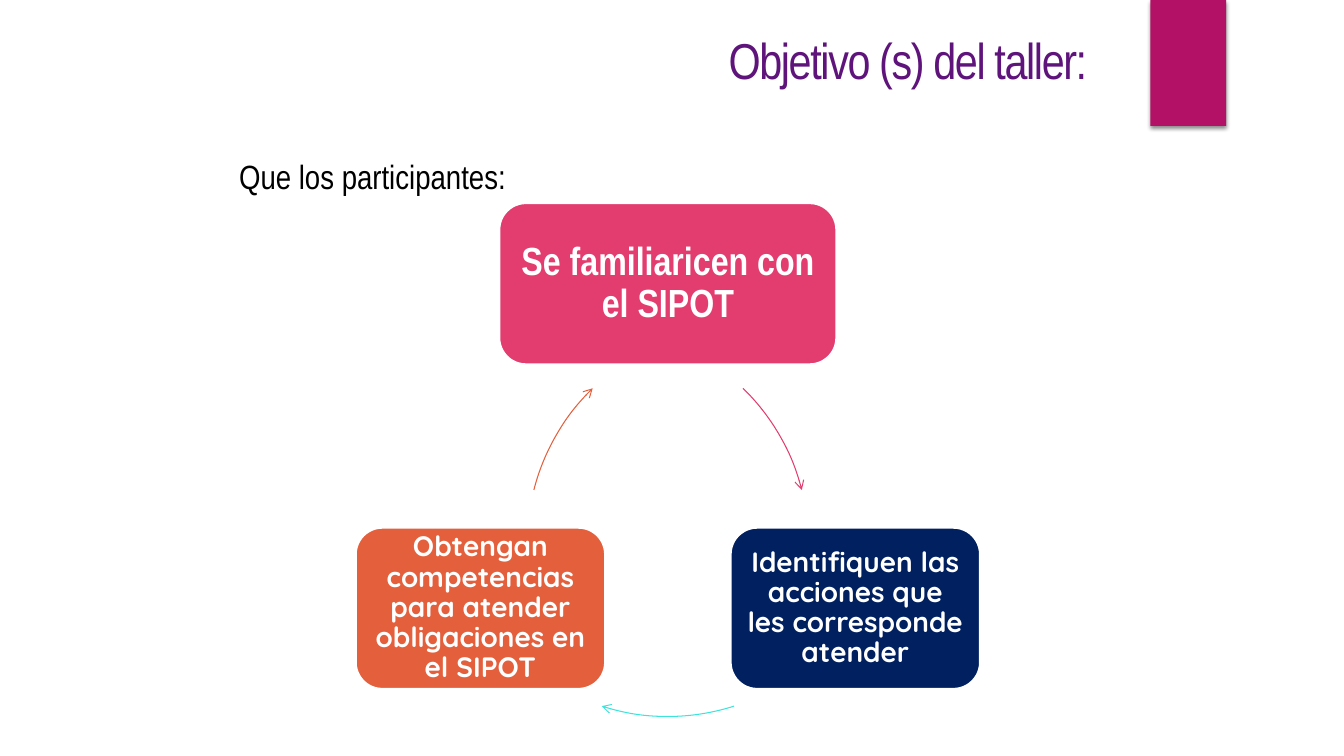
from dataclasses import dataclass
from math import cos, radians, sin

from lxml.etree import SubElement
from pptx import Presentation
from pptx.dml.color import RGBColor
from pptx.enum.shapes import MSO_SHAPE
from pptx.enum.text import MSO_ANCHOR, PP_ALIGN
from pptx.oxml.ns import qn
from pptx.util import Inches, Pt


@dataclass(frozen=True)
class Theme:
    """Colours, fonts and type sizes of the slide."""
    white: str = "FFFFFF"
    black: str = "000000"
    title: str = "5F147C"
    ribbon: str = "B31166"
    pink: str = "E33D6F"
    navy: str = "002060"
    orange: str = "E45F3C"
    turquoise: str = "3CE4DC"
    narrow: str = "Arial Narrow"
    rounded: str = "Quicksand"
    title_size: int = 36
    intro_size: int = 24
    lead_size: int = 28
    goal_size: int = 20


THEME = Theme()


@dataclass(frozen=True)
class Box:
    """A rectangle in inches."""
    left: float
    top: float
    width: float
    height: float

    def emu(self):
        """Return the four lengths for python-pptx."""
        return [Inches(n) for n in (self.left, self.top, self.width, self.height)]


def centred(x, y, width, height):
    """Return a box centred on a point."""
    return Box(x - width / 2, y - height / 2, width, height)


def add_shape(slide, preset, box, fill=None, line=None, weight=1):
    """Add a preset shape without shadow."""
    shape = slide.shapes.add_shape(preset, *box.emu())
    shape.shadow.inherit = False
    if fill:
        shape.fill.solid()
        shape.fill.fore_color.rgb = RGBColor.from_string(fill)
    else:
        shape.fill.background()
    if line:
        shape.line.color.rgb = RGBColor.from_string(line)
        shape.line.width = Pt(weight)
    else:
        shape.line.fill.background()
    return shape


def write(shape, text, *, font, size, color, bold=False, align=PP_ALIGN.CENTER,
          anchor=MSO_ANCHOR.MIDDLE, inset=None, leading=None, indent=0, tracking=0):
    """Write one formatted paragraph into a shape."""
    frame = shape.text_frame
    frame.word_wrap = True
    frame.vertical_anchor = anchor
    if inset is not None:
        frame.margin_left = frame.margin_right = Inches(inset)
        frame.margin_top = frame.margin_bottom = Inches(inset)
    paragraph = frame.paragraphs[0]
    paragraph.alignment = align
    if leading:
        paragraph.line_spacing = leading
    if indent:
        paragraph._p.get_or_add_pPr().set("marL", str(Inches(indent)))
    run = paragraph.add_run()
    run.text = text
    run.font.name = font
    run.font.size = Pt(size)
    run.font.bold = bold
    run.font.color.rgb = RGBColor.from_string(color)
    if tracking:
        run._r.get_or_add_rPr().set("spc", str(tracking * 100))


def add_ribbon(slide, box):
    """Draw the ribbon with its soft shadow below."""
    ribbon = add_shape(slide, MSO_SHAPE.RECTANGLE, box, THEME.ribbon)
    effects = ribbon._element.spPr.find(qn("a:effectLst"))
    shadow = SubElement(effects, qn("a:outerShdw"), blurRad=str(Pt(3)),
                        dist=str(Pt(2)), dir="5400000", rotWithShape="0")
    tint = SubElement(shadow, qn("a:srgbClr"), val=THEME.black)
    SubElement(tint, qn("a:alpha"), val="45000")


def add_title(slide, box, text):
    """Write the title at the right of its box."""
    write(slide.shapes.add_textbox(*box.emu()), text, font=THEME.narrow,
          size=THEME.title_size, color=THEME.title, align=PP_ALIGN.RIGHT, tracking=-1)


def add_intro(slide, box, text):
    """Write the sentence that leads into the cycle."""
    band = add_shape(slide, MSO_SHAPE.RECTANGLE, box, THEME.white, THEME.white, 1.5)
    write(band, text, font=THEME.narrow, size=THEME.intro_size, color=THEME.black,
          align=PP_ALIGN.JUSTIFY, anchor=MSO_ANCHOR.TOP, indent=0.1)


def add_arc(slide, box, start, end, color):
    """Draw a clockwise arc with an arrowhead, angles in degrees."""
    arc = add_shape(slide, MSO_SHAPE.ARC, box, line=color, weight=0.75)
    arc.adjustments[0], arc.adjustments[1] = start * 0.6, end * 0.6
    SubElement(arc.line._get_or_add_ln(), qn("a:tailEnd"), type="arrow")


def add_cycle(slide, box, goals, arcs):
    """Place three goals around a ring and the arcs between them."""
    node_width, node_height = box.width * 0.4, box.height / 3
    radius = (box.height - node_height) / 1.5
    middle_x = box.left + box.width / 2
    middle_y = box.top + node_height / 2 + radius
    for step, (text, fill, share, inset, font, size) in enumerate(goals):
        angle = radians(120 * step - 90)
        node = centred(middle_x + radius * cos(angle), middle_y + radius * sin(angle),
                       node_width * share, node_height)
        shape = add_shape(slide, MSO_SHAPE.ROUNDED_RECTANGLE, node, fill, THEME.white, 2.25)
        write(shape, text, font=font, size=size, color=THEME.white, bold=True,
              inset=inset, leading=0.9)
    for shift_x, shift_y, start, end, color in arcs:
        ring = centred(middle_x + radius * shift_x, middle_y + radius * shift_y,
                       2 * radius, 2 * radius)
        add_arc(slide, ring, start, end, color)


def build_objectives(slide, width, height):
    """Compose the workshop objectives slide."""
    add_ribbon(slide, Box(width * 0.856, 0, 0.75, height / 6))
    add_title(slide, Box(width * 0.382, 0.01, 5.79, 1.15), "Objetivo (s) del taller:")
    add_intro(slide, Box(width * 0.163, height * 0.2, 8.35, 0.5), "Que los participantes:")
    goals = [
        ("Se familiaricen con el SIPOT", THEME.pink, 1.35, 0.12,
         THEME.narrow, THEME.lead_size),
        ("Identifiquen las acciones que les corresponde atender", THEME.navy, 1, 0.08,
         THEME.rounded, THEME.goal_size),
        ("Obtengan competencias para atender obligaciones en el SIPOT", THEME.orange, 1,
         0.08, THEME.rounded, THEME.goal_size),
    ]
    arcs = [
        (-0.35, 0.2, 314.2, 345.7, THEME.pink),
        (0, 0, 72.2, 107.8, THEME.turquoise),
        (0.35, 0.2, 194.3, 225.8, THEME.orange),
    ]
    add_cycle(slide, Box(width * 0.264, height * 0.268, 6.21, 4.83), goals, arcs)


def main():
    """Build and save the presentation."""
    deck = Presentation()
    deck.slide_width, deck.slide_height = Inches(13.33), Inches(7.5)
    slide = deck.slides.add_slide(deck.slide_layouts[6])
    build_objectives(slide, 13.33, 7.5)
    deck.save("out.pptx")


if __name__ == "__main__":
    main()
